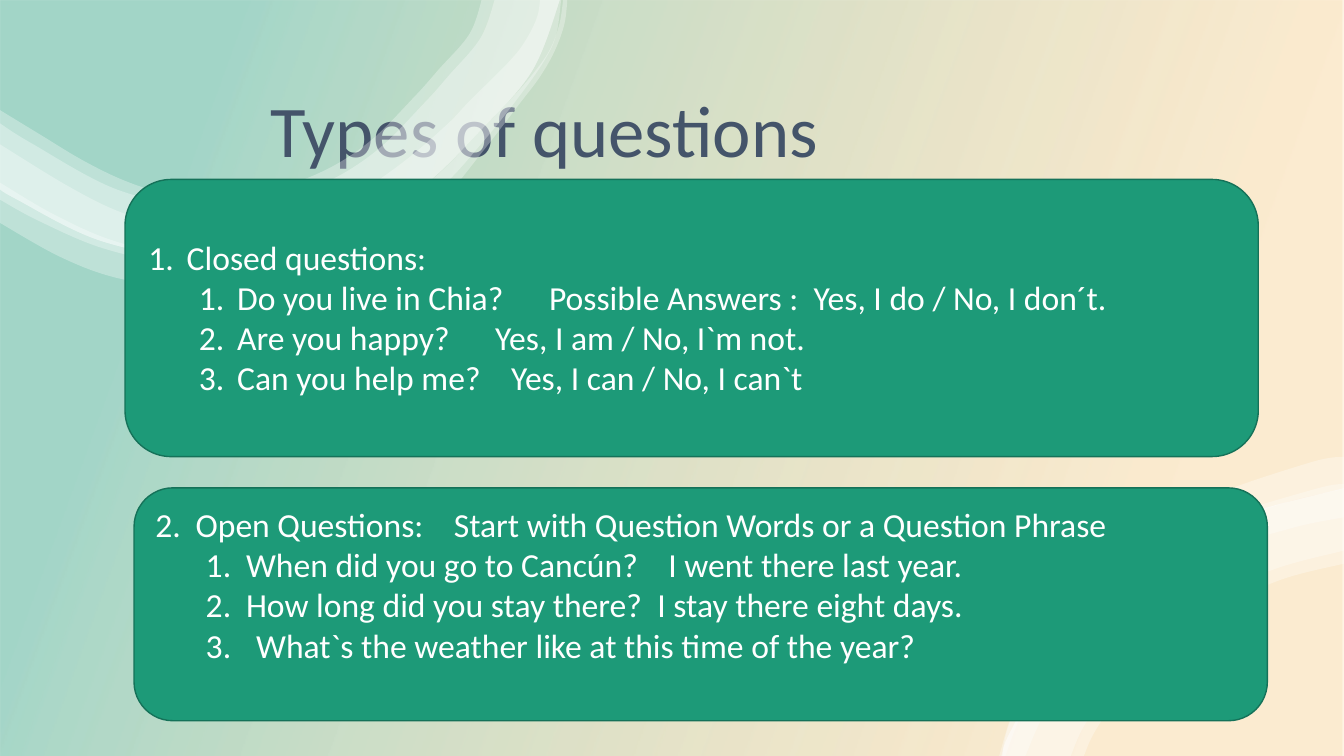
from lxml.etree import SubElement
from pptx import Presentation
from pptx.dml.color import RGBColor
from pptx.enum.shapes import MSO_SHAPE
from pptx.enum.text import MSO_ANCHOR, PP_ALIGN
from pptx.oxml.ns import qn
from pptx.util import Inches, Pt

WHITE = RGBColor(0xFF, 0xFF, 0xFF)
GREEN = RGBColor(0x1D, 0x9A, 0x78)
DARK_GREEN = RGBColor(0x15, 0x72, 0x59)
ORANGE = RGBColor(0xF1, 0x9D, 0x19)
SLATE = RGBColor(0x44, 0x54, 0x6A)
FONT = "Calibri"
TEXT_SIZE = 24
SPACE_WIDTH = 0.226 * TEXT_SIZE
WIDTH, HEIGHT = 13.33, 7.5

TITLE = "Types of questions "

PANELS = [
    {
        "frame": (1.24, 1.78, 11.24, 2.75), "start": 1, "insets": (0.03, 0.05),
        "hangings": (0.38, 0.38, 0.38, 0.38),
        "lines": [
            ["Closed questions:"],
            ["Do you live in Chia?", 6, "Possible Answers :", 2, "Yes, I do / No, I don´t."],
            ["Are you happy?", 6, "Yes, I am / No, I`m not."],
            ["Can you help me?", 4, "Yes, I can / No, I can`t"],
        ],
    },
    {
        "frame": (1.33, 4.84, 11.24, 2.31), "start": 2, "insets": (0.05, 0.45),
        "hangings": (0.4, 0.4, 0.4, 0.5),
        "lines": [
            ["Open Questions:", 4, "Start with Question Words or a Question Phrase"],
            ["When did you go to Cancún?", 4, "I went there last year."],
            ["How long did you stay there?", 2, "I stay there eight days."],
            ["What`s the weather like at this time of the year?"],
        ],
    },
]

TOP_LOWER_EDGE = [
    (-0.02, 1.86), (0.15, 1.97), (1, 2.39), (2, 2.57), (2.87, 2.48), (3.6, 2.23),
    (4.22, 1.83), (4.75, 1.31), (5.28, 0.7), (5.57, -0.05),
]
BOTTOM_UPPER_EDGE = [
    (9.94, 7.5), (10.02, 7.26), (10.52, 6.4), (11.26, 5.69), (12.19, 5.16), (13.34, 4.84),
]
TOP_RIBBONS = [
    ([(5.59, -0.05), (5.55, 0.23), (5.45, 0.5), (5.28, 0.74), (5.08, 0.97), (4.75, 1.31),
      (4.43, 1.65), (4.19, 1.85), (3.66, 2.19), (3.06, 2.41), (2.4, 2.52), (1.73, 2.52),
      (1.1, 2.38), (0.52, 2.12), (-0.02, 1.8)],
     [(-0.02, 2.2), (0.6, 2.55), (1.17, 2.76), (1.88, 2.86), (2.44, 2.84), (3.18, 2.7),
      (3.85, 2.41), (4.38, 1.99), (4.79, 1.5), (5.16, 1.02), (5.35, 0.77), (5.5, 0.51),
      (5.6, 0.23), (5.63, -0.05)]),
    ([(5.36, -0.05), (5.33, 0.16), (5.22, 0.39), (5.06, 0.6), (4.65, 1.01), (4.44, 1.23),
      (4.01, 1.6), (3.54, 1.92), (3.01, 2.17), (2.4, 2.28), (1.78, 2.26), (1.21, 2.11),
      (0.68, 1.85), (-0.02, 1.42)],
     [(-0.02, 1.97), (0.38, 2.19), (1.01, 2.46), (1.72, 2.61), (2.44, 2.59), (3.14, 2.47),
      (3.8, 2.23), (4.36, 1.87), (4.78, 1.42), (5.14, 0.97), (5.4, 0.6), (5.52, 0.33),
      (5.57, -0.05)]),
    ([(4.92, -0.05), (4.77, 0.37), (4.45, 0.75), (4.21, 1.02), (3.74, 1.49), (3.23, 1.81),
      (2.65, 1.99), (2, 2.05), (1.16, 1.88), (0.31, 1.42), (-0.02, 1.21)], TOP_LOWER_EDGE),
    ([(4.79, -0.05), (4.66, 0.33), (4.35, 0.69), (4.11, 0.96), (3.67, 1.4), (3.2, 1.7),
      (2.64, 1.89), (2, 1.95), (1.61, 1.91), (1.23, 1.79), (0.82, 1.59), (0.39, 1.33),
      (-0.02, 1.08)], TOP_LOWER_EDGE),
]
BOTTOM_RIBBONS = [
    ([(9.91, 7.5), (10.07, 7), (10.39, 6.38), (10.81, 5.82), (11.34, 5.34), (11.95, 4.95),
      (12.99, 4.59), (13.34, 4.53)],
     [(13.34, 4.85), (12.74, 4.99), (12.11, 5.24), (11.52, 5.57), (10.99, 5.98),
      (10.53, 6.47), (10.16, 7.03), (9.97, 7.5)]),
    (BOTTOM_UPPER_EDGE,
     [(13.34, 5.59), (12.71, 5.75), (12.14, 6.02), (11.62, 6.37), (11.19, 6.78),
      (10.87, 7.24), (10.75, 7.5)]),
    ([(9.93, 7.5), (10.12, 6.96), (10.93, 5.9), (11.46, 5.49), (12.06, 5.16),
      (13.05, 4.85), (13.34, 4.8)],
     [(13.34, 5.13), (12.81, 5.24), (12.21, 5.46), (11.14, 6.12), (10.71, 6.57),
      (10.36, 7.08), (10.17, 7.5)]),
    (BOTTOM_UPPER_EDGE,
     [(13.34, 5.46), (12.66, 5.64), (12.08, 5.91), (11.54, 6.27), (11.1, 6.7),
      (10.76, 7.19), (10.62, 7.5)]),
]


def set_alpha(parent, percent):
    for color in parent.iter(qn("a:srgbClr")):
        SubElement(color, qn("a:alpha")).set("val", str(percent * 1000))


def curve_controls(edge):
    padded = [edge[0], *edge, edge[-1]]
    for before, start, end, after in zip(padded, padded[1:], padded[2:], padded[3:]):
        yield (
            [s + (e - b) / 6 for b, s, e in zip(before, start, end)],
            [e - (a - s) / 6 for s, e, a in zip(start, end, after)],
        )


def bend_edges(ribbon, first_edge, second_edge):
    left, top = ribbon.left, ribbon.top
    controls = [*curve_controls(first_edge), None, *curve_controls(second_edge)]
    segments = list(ribbon.element.iter(qn("a:lnTo")))
    for segment, pair in zip(segments, controls):
        if pair is None:
            continue
        segment.tag = qn("a:cubicBezTo")
        for index, (x, y) in enumerate(pair):
            point = segment.makeelement(qn("a:pt"))
            point.set("x", str(Inches(x) - left))
            point.set("y", str(Inches(y) - top))
            segment.insert(index, point)


def add_ribbons(page, ribbons):
    group = page.shapes.add_group_shape()
    for first_edge, second_edge in ribbons:
        outline = [(Inches(x), Inches(y)) for x, y in first_edge + second_edge]
        builder = group.shapes.build_freeform(*outline[0])
        builder.add_line_segments(outline[1:], close=True)
        ribbon = builder.convert_to_shape()
        bend_edges(ribbon, first_edge, second_edge)
        ribbon.shadow.inherit = False
        ribbon.fill.solid()
        ribbon.fill.fore_color.rgb = WHITE
        ribbon.line.fill.background()
        set_alpha(ribbon.element.spPr, 30)


def add_box(page, kind, frame):
    box = page.shapes.add_shape(kind, *map(Inches, frame))
    box.shadow.inherit = False
    return box


def add_backdrop(page):
    frame = (0, 0, WIDTH, HEIGHT)
    base = add_box(page, MSO_SHAPE.RECTANGLE, frame)
    base.fill.solid()
    base.fill.fore_color.rgb = WHITE
    base.line.fill.background()
    tint = add_box(page, MSO_SHAPE.RECTANGLE, frame)
    tint.line.fill.background()
    tint.fill.gradient()
    tint.fill.gradient_angle = 160
    stops = [(0.16, ORANGE, 20), (0.85, GREEN, 40)]
    for stop, (position, color, alpha) in zip(tint.fill.gradient_stops, stops):
        stop.position = position
        stop.color.rgb = color
        set_alpha(stop.color._xFill, alpha)


def format_text(para, size, color, align):
    para.alignment = align
    para.font.name = FONT
    para.font.size = Pt(size)
    para.font.color.rgb = color


def write_line(para, parts, level, hanging, start):
    para.level = level
    properties = para._p.get_or_add_pPr()
    properties.set("marL", str(Inches(hanging + 0.5 * level)))
    properties.set("indent", str(Inches(-hanging)))
    SubElement(properties, qn("a:buFont")).set("typeface", "+mj-lt")
    number = SubElement(properties, qn("a:buAutoNum"))
    number.set("type", "arabicPeriod")
    if start > 1:
        number.set("startAt", str(start))
    for part in parts:
        span = para.add_run()
        if isinstance(part, int):
            span.text = " "
            spacing = round((part - 1) * SPACE_WIDTH * 100)
            span._r.get_or_add_rPr().set("spc", str(spacing))
        else:
            span.text = part
    format_text(para, TEXT_SIZE, WHITE, PP_ALIGN.JUSTIFY)


def add_panel(page, panel):
    box = add_box(page, MSO_SHAPE.ROUNDED_RECTANGLE, panel["frame"])
    box.fill.solid()
    box.fill.fore_color.rgb = GREEN
    box.line.color.rgb = DARK_GREEN
    box.line.width = Pt(1)
    frame = box.text_frame
    frame.word_wrap = True
    frame.vertical_anchor = MSO_ANCHOR.MIDDLE
    frame.margin_top, frame.margin_bottom = map(Inches, panel["insets"])
    for index, (parts, hanging) in enumerate(zip(panel["lines"], panel["hangings"])):
        para = frame.add_paragraph() if index else frame.paragraphs[0]
        write_line(para, parts, min(index, 1), hanging, 1 if index else panel["start"])


def main():
    deck = Presentation()
    deck.slide_width, deck.slide_height = Inches(WIDTH), Inches(HEIGHT)
    page = deck.slides.add_slide(deck.slide_layouts[5])
    add_backdrop(page)
    title = page.shapes.title
    title.element.getparent().append(title.element)
    title.left, title.top, title.width, title.height = map(Inches, (1.31, 0.51, 8.34, 1.26))
    title.text_frame.text = TITLE
    title.text_frame.vertical_anchor = MSO_ANCHOR.BOTTOM
    heading = title.text_frame.paragraphs[0]
    heading.line_spacing = 0.9
    format_text(heading, 52, SLATE, PP_ALIGN.CENTER)
    add_ribbons(page, TOP_RIBBONS)
    add_ribbons(page, BOTTOM_RIBBONS)
    for panel in PANELS:
        add_panel(page, panel)
    deck.save("out.pptx")


if __name__ == "__main__":
    main()
